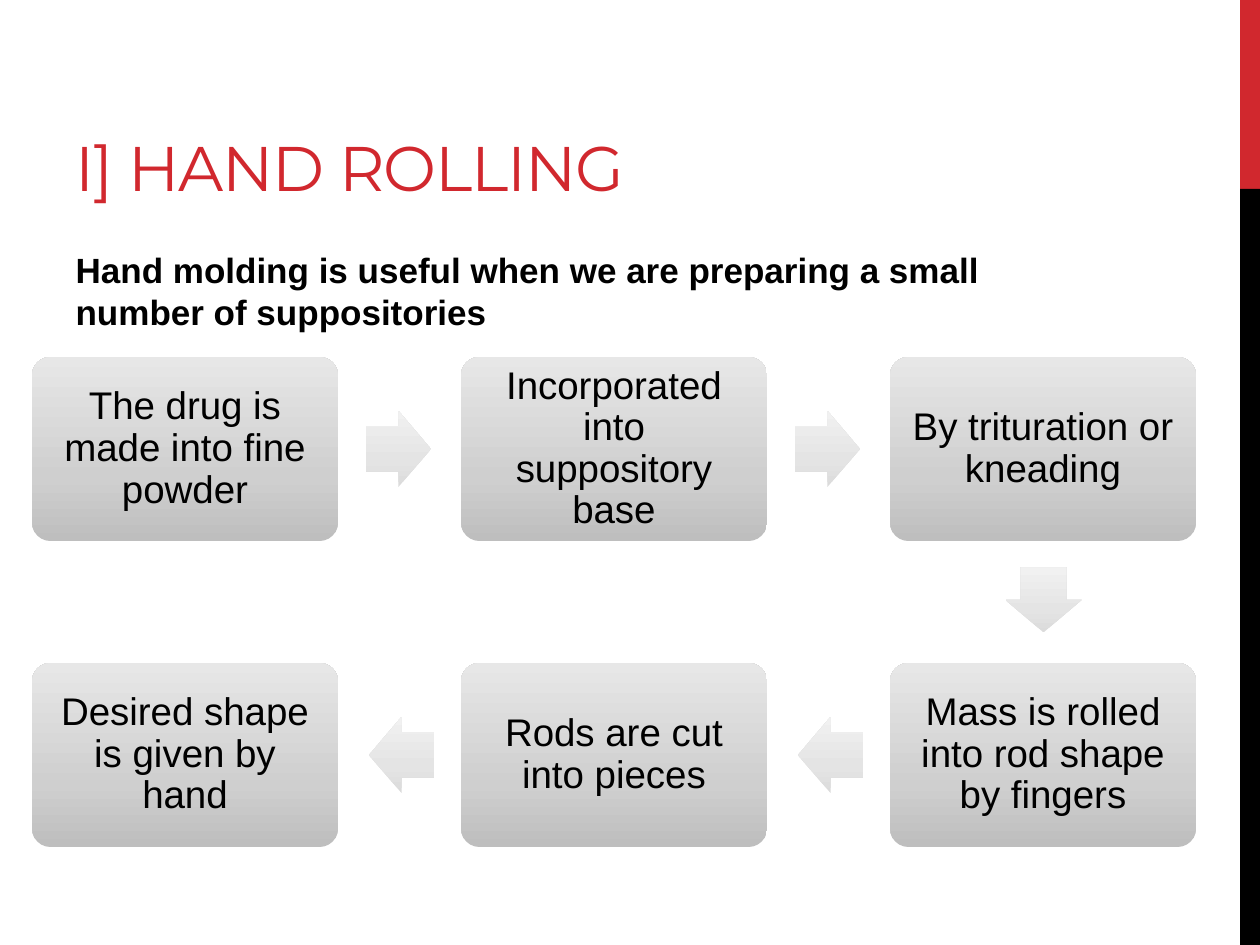
import pptx
import pptx.dml.color
import pptx.enum.shapes
import pptx.enum.text
import pptx.oxml
import pptx.oxml.ns
import pptx.util
from dataclasses import dataclass

SHAPE = pptx.enum.shapes.MSO_SHAPE
ANCHOR = pptx.enum.text.MSO_ANCHOR
ALIGN = pptx.enum.text.PP_ALIGN
EMU_PER_PX = 914400 / 126


@dataclass(frozen=True)
class Theme:
    """Colours, fonts and type sizes of the slide."""
    red: str = "D1282E"
    black: str = "000000"
    step_fill: tuple = ((0, "BEBEBE"), (35, "CFCFCF"), (100, "E7E7E7"))
    arrow_fill: tuple = ((0, "DBDBDB"), (35, "E4E4E4"), (100, "F1F1F1"))
    heading_font: str = "Montserrat"
    text_font: str = "Arial"
    title_size: int = 36
    body_size: int = 20
    step_size: int = 22


def px(length):
    """Turn pixels into EMU."""
    return pptx.util.Emu(round(length * EMU_PER_PX))


def apply(target, values):
    """Set every attribute named in a dict."""
    for name, value in values.items():
        setattr(target, name, value)


class Deck:
    """Holds the theme and the current slide."""

    def __init__(self, theme):
        """Start a presentation with one title and body slide."""
        self.theme = theme
        self.presentation = pptx.Presentation()
        apply(self.presentation, {"slide_width": px(1260), "slide_height": px(945)})
        self.slide = self.presentation.slides.add_slide(self.presentation.slide_layouts[1])

    def set_text(self, shape, text, color, font, frame, paragraph):
        """Put one formatted paragraph into a shape and return its run."""
        apply(shape.text_frame, {"word_wrap": True, **frame})
        line = shape.text_frame.paragraphs[0]
        line.text = text
        apply(line, paragraph)
        run = line.runs[0]
        apply(run.font, font)
        run.font.color.rgb = pptx.dml.color.RGBColor.from_string(color)
        return run

    def place(self, shape, box):
        """Move and size a placeholder."""
        apply(shape, dict(zip(("left", "top", "width", "height"), map(px, box))))

    def title(self, text, box):
        """Fill the title placeholder."""
        heading = self.slide.shapes.title
        self.place(heading, box)
        font = {"name": self.theme.heading_font, "size": pptx.util.Pt(self.theme.title_size)}
        run = self.set_text(heading, text, self.theme.red, font,
                            {"vertical_anchor": ANCHOR.BOTTOM}, {"alignment": ALIGN.LEFT})
        run.font._element.set("spc", "-60")

    def body(self, text, box):
        """Fill the body placeholder with an unbulleted paragraph."""
        intro = self.slide.placeholders[1]
        self.place(intro, box)
        properties = intro.text_frame.paragraphs[0]._p.get_or_add_pPr()
        for name in ("marL", "indent"):
            properties.set(name, "0")
        properties.append(pptx.oxml.parse_xml(f"<a:buNone {pptx.oxml.ns.nsdecls('a')}/>"))
        font = {"name": self.theme.text_font, "size": pptx.util.Pt(self.theme.body_size),
                "bold": True}
        self.set_text(intro, text, self.theme.black, font, {"vertical_anchor": ANCHOR.TOP},
                      {"alignment": ALIGN.LEFT, "space_before": pptx.util.Pt(0),
                       "space_after": pptx.util.Pt(6)})

    def shape(self, preset, box, adjustments=()):
        """Add a preset shape without line or shadow."""
        shape = self.slide.shapes.add_shape(preset, *map(px, box))
        shape.shadow.inherit = False
        shape.line.fill.background()
        for index, value in enumerate(adjustments):
            shape.adjustments[index] = value
        return shape

    def bar(self, color, box):
        """Add a solid bar."""
        fill = self.shape(SHAPE.RECTANGLE, box).fill
        fill.solid()
        fill.fore_color.rgb = pptx.dml.color.RGBColor.from_string(color)

    def shade(self, shape, stops):
        """Fill a shape with an upright gradient."""
        stop_xml = "".join(f'<a:gs pos="{position * 1000}"><a:srgbClr val="{color}"/></a:gs>'
                           for position, color in stops)
        gradient = pptx.oxml.parse_xml(
            f'<a:gradFill {pptx.oxml.ns.nsdecls("a")} rotWithShape="0"><a:gsLst>{stop_xml}'
            '</a:gsLst><a:lin ang="16200000" scaled="0"/></a:gradFill>')
        shape._element.spPr.find(pptx.oxml.ns.qn("a:prstGeom")).addnext(gradient)

    def step(self, text, box):
        """Add one process step."""
        step = self.shape(SHAPE.ROUNDED_RECTANGLE, box, (0.1,))
        self.shade(step, self.theme.step_fill)
        margins = {f"margin_{side}": px(17) for side in ("left", "right", "top", "bottom")}
        font = {"name": self.theme.text_font, "size": pptx.util.Pt(self.theme.step_size)}
        self.set_text(step, text, self.theme.black, font,
                      {"vertical_anchor": ANCHOR.MIDDLE, **margins},
                      {"alignment": ALIGN.CENTER, "line_spacing": 0.9})

    def arrow(self, box, rotation):
        """Add a block arrow turned by an angle."""
        arrow = self.shape(SHAPE.RIGHT_ARROW, box, (0.6, 0.5))
        arrow.rotation = rotation
        self.shade(arrow, self.theme.arrow_fill)


def main():
    """Build the hand rolling slide."""
    theme = Theme()
    deck = Deck(theme)
    deck.bar(theme.red, (1240, 0, 20, 189))
    deck.bar(theme.black, (1240, 189, 20, 756))
    deck.title("I] HAND ROLLING", (63, 21, 798, 189))
    deck.body("Hand molding is useful when we are preparing a small number of suppositories",
              (63, 242, 1050, 602))

    columns = [32 + 429 * index for index in range(3)]
    rows = {357: ("The drug is made into fine powder", "Incorporated into suppository base",
                  "By trituration or kneading"),
            663: ("Desired shape is given by hand", "Rods are cut into pieces",
                  "Mass is rolled into rod shape by fingers")}
    for top, steps in rows.items():
        for left, text in zip(columns, steps):
            deck.step(text, (left, top, 306, 184))

    for left in columns[:2]:
        deck.arrow((left + 334, 411, 65, 76), 0)
        deck.arrow((left + 337, 717, 65, 76), 180)
    deck.arrow((columns[2] + 121, 562, 65, 76), 90)
    deck.presentation.save("out.pptx")


if __name__ == "__main__":
    main()
